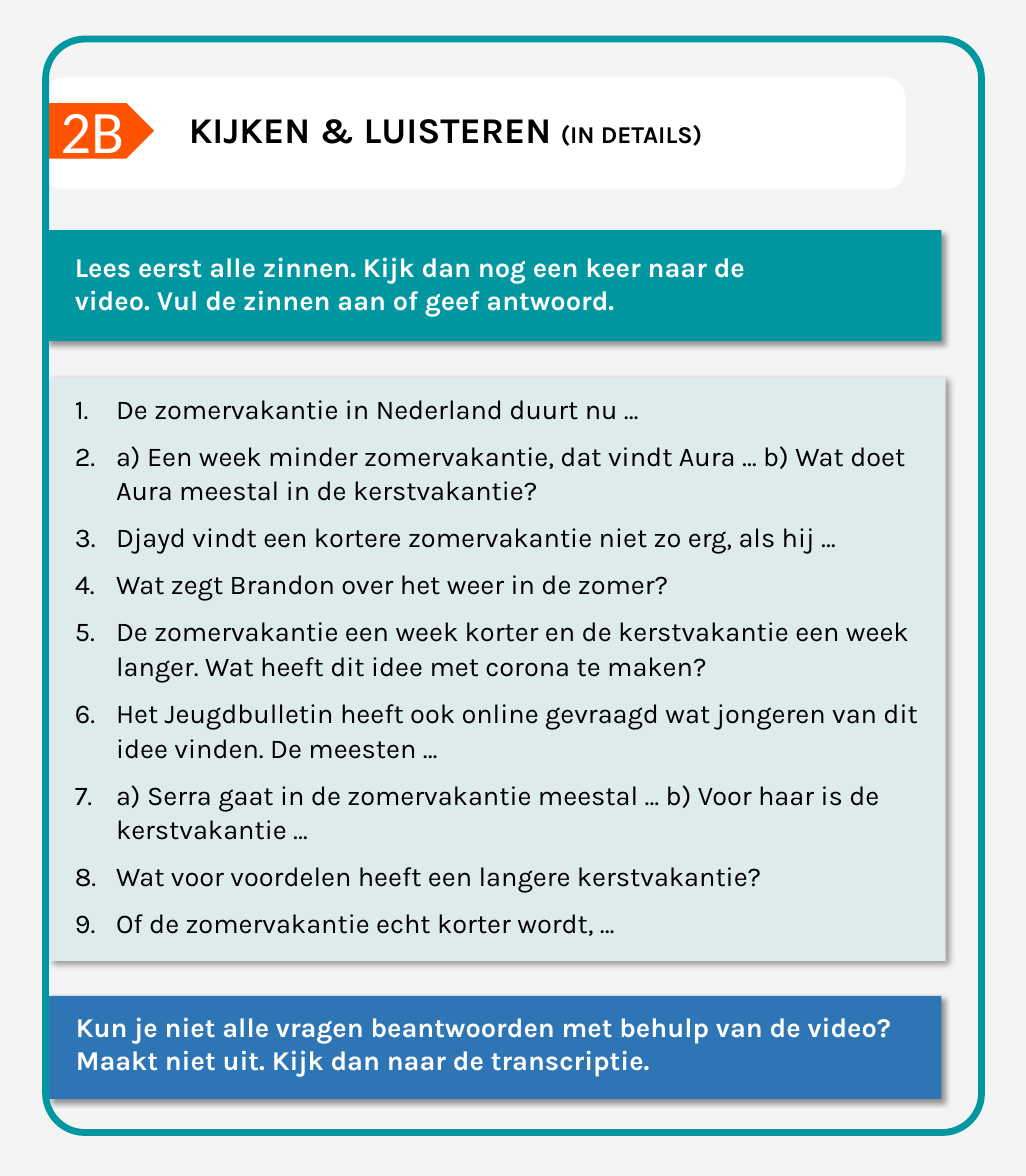
"""Build the 2B worksheet slide about watching and listening in detail."""
from dataclasses import dataclass

import lxml.etree
import pptx
import pptx.dml.color
import pptx.enum.shapes
import pptx.enum.text
import pptx.oxml.ns
import pptx.slide
import pptx.util

EMU_PER_PX = 9144
COLOURS = {
    "page": "F4F4F4", "teal": "0097A1", "blue": "2E75B6", "mint": "DEEBEC",
    "orange": "FF5300", "white": "FFFFFF", "black": "000000",
}
PRESETS = pptx.enum.shapes.MSO_SHAPE
LIST_FORMAT = {"line_spacing": 1.07, "space_after": pptx.util.Pt(8)}
LIST_INDENT = 38
SHADOW = {"blurRad": 4 * 12700, "dist": 3 * 12700, "dir": 45 * 60000,
          "algn": "tl", "rotWithShape": 0}
SHADOW_OPACITY = 40000

QUESTIONS = [
    "De zomervakantie in Nederland duurt nu …",
    "a) Een week minder zomervakantie, dat vindt Aura … "
    "b) Wat doet Aura meestal in de kerstvakantie?",
    "Djayd vindt een kortere zomervakantie niet zo erg, als hij …",
    "Wat zegt Brandon over het weer in de zomer?",
    "De zomervakantie een week korter en de kerstvakantie een week langer. "
    "Wat heeft dit idee met corona te maken?",
    "Het Jeugdbulletin heeft ook online gevraagd wat jongeren van dit idee "
    "vinden. De meesten …",
    "a) Serra gaat in de zomervakantie meestal … "
    "b) Voor haar is de kerstvakantie …",
    "Wat voor voordelen heeft een langere kerstvakantie?",
    "Of de zomervakantie echt korter wordt, …",
]


@dataclass(frozen=True)
class Box:
    left: int
    top: int
    width: int
    height: int

    def emu(self) -> list[int]:
        return [px * EMU_PER_PX for px in (self.left, self.top, self.width, self.height)]


@dataclass(frozen=True)
class Panel:
    box: Box
    preset: PRESETS = PRESETS.RECTANGLE
    fill: str | None = None
    outline: str | None = None
    outline_pt: float = 1
    corner: float | None = None
    shadow: bool = False


@dataclass(frozen=True)
class Phrase:
    text: str
    size: int = 18
    colour: str = "white"
    bold: bool = True
    font: str = "Karla"


@dataclass(frozen=True)
class Caption:
    box: Box
    paragraphs: list[list[Phrase]]
    numbered: bool = False


WORKSHEET = [
    Panel(Box(45, 917, 822, 95), fill="blue", shadow=True),
    Panel(Box(42, 212, 825, 102), fill="teal", shadow=True),
    Panel(Box(42, 72, 791, 102), PRESETS.ROUNDED_RECTANGLE, "white", "white"),
    Panel(Box(42, 95, 100, 51), PRESETS.PENTAGON, "orange"),
    Caption(Box(46, 81, 80, 77), [[Phrase("2B", 40, bold=False, font="Calibri")]]),
    Caption(Box(164, 94, 569, 50), [[Phrase("KIJKEN & LUISTEREN ", 24, "black"),
                                     Phrase("(IN DETAILS)", 16, "black")]]),
    Panel(Box(42, 36, 862, 1007), PRESETS.ROUNDED_RECTANGLE, outline="teal",
          outline_pt=4.5, corner=0.042),
    Caption(Box(59, 226, 692, 71), [[Phrase(
        "Lees eerst alle zinnen. Kijk dan nog een keer naar de video. "
        "Vul de zinnen aan of geef antwoord.")]]),
    Panel(Box(46, 348, 825, 537), fill="mint", shadow=True),
    Caption(Box(59, 354, 808, 519),
            [[Phrase(question, colour="black", bold=False)] for question in QUESTIONS],
            numbered=True),
    Caption(Box(60, 926, 783, 71), [[Phrase(
        "Kun je niet alle vragen beantwoorden met behulp van de video? "
        "Maakt niet uit. Kijk dan naar de transcriptie.")]]),
]


def rgb(name: str) -> pptx.dml.color.RGBColor:
    return pptx.dml.color.RGBColor.from_string(COLOURS[name])


def add_element(parent: lxml.etree._Element, tag: str, **values: object) -> lxml.etree._Element:
    attributes = {key: str(value) for key, value in values.items()}
    return lxml.etree.SubElement(parent, pptx.oxml.ns.qn(tag), attributes)


def draw_panel(slide: pptx.slide.Slide, panel: Panel) -> None:
    shape = slide.shapes.add_shape(panel.preset, *panel.box.emu())
    shape.shadow.inherit = False
    if panel.corner is not None:
        shape.adjustments[0] = panel.corner
    for paint, colour in ((shape.fill, panel.fill), (shape.line.fill, panel.outline)):
        if colour:
            paint.solid()
            paint.fore_color.rgb = rgb(colour)
        else:
            paint.background()
    if panel.outline:
        shape.line.width = pptx.util.Pt(panel.outline_pt)
    if panel.shadow:
        effects = shape._element.spPr.find(pptx.oxml.ns.qn("a:effectLst"))
        cast = add_element(effects, "a:outerShdw", **SHADOW)
        tint = add_element(cast, "a:srgbClr", val=COLOURS["black"])
        add_element(tint, "a:alpha", val=SHADOW_OPACITY)


def draw_caption(slide: pptx.slide.Slide, caption: Caption) -> None:
    frame = slide.shapes.add_textbox(*caption.box.emu()).text_frame
    frame.word_wrap = True
    frame.auto_size = pptx.enum.text.MSO_AUTO_SIZE.SHAPE_TO_FIT_TEXT
    for index, phrases in enumerate(caption.paragraphs):
        paragraph = frame.add_paragraph() if index else frame.paragraphs[0]
        if caption.numbered:
            for attribute, value in LIST_FORMAT.items():
                setattr(paragraph, attribute, value)
            properties = paragraph._p.get_or_add_pPr()
            properties.set("marL", str(LIST_INDENT * EMU_PER_PX))
            properties.set("indent", str(-LIST_INDENT * EMU_PER_PX))
            add_element(properties, "a:buAutoNum", type="arabicPeriod")
        for phrase in phrases:
            run = paragraph.add_run()
            run.text = phrase.text
            run.font.color.rgb = rgb(phrase.colour)
            font_format = {"name": phrase.font, "size": pptx.util.Pt(phrase.size),
                           "bold": phrase.bold}
            for attribute, value in font_format.items():
                setattr(run.font, attribute, value)


def main() -> None:
    deck = pptx.Presentation()
    deck.slide_width, deck.slide_height = 945 * EMU_PER_PX, 1083 * EMU_PER_PX
    slide = deck.slides.add_slide(deck.slide_layouts[6])
    slide.background.fill.solid()
    slide.background.fill.fore_color.rgb = rgb("page")
    for part in WORKSHEET:
        if isinstance(part, Panel):
            draw_panel(slide, part)
        else:
            draw_caption(slide, part)
    deck.save("out.pptx")


if __name__ == "__main__":
    main()
